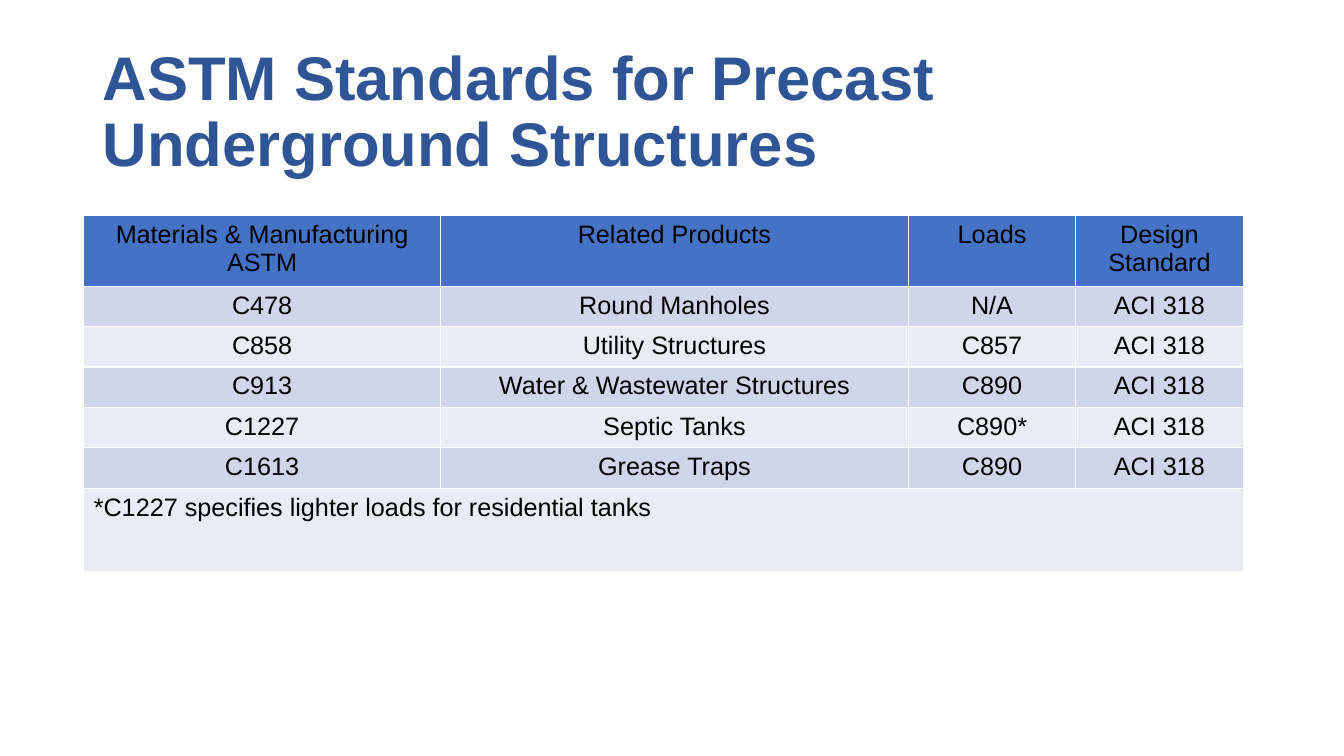
from pptx import Presentation
from pptx.dml.color import RGBColor
from pptx.enum.text import MSO_ANCHOR, PP_ALIGN
from pptx.util import Inches, Pt

LEFT, CENTER = PP_ALIGN.LEFT, PP_ALIGN.CENTER
MIDDLE = MSO_ANCHOR.MIDDLE
NAVY = RGBColor(0x2F, 0x55, 0x97)
BLACK = RGBColor(0, 0, 0)
HEADER_BLUE = RGBColor(0x44, 0x72, 0xC4)
BANDS = (RGBColor(0xE9, 0xEB, 0xF5), RGBColor(0xCF, 0xD5, 0xEA))

TITLE_FONT = {"name": "Arial", "size": Pt(44), "bold": True}
CELL_FONT = {"name": "Arial", "size": Pt(18), "bold": False}

TITLE = "ASTM Standards for Precast Underground Structures"
HEADER = ("Materials & Manufacturing ASTM", "Related Products", "Loads", "Design Standard")
STANDARDS = (
    ("C478", "Round Manholes", "N/A"),
    ("C858", "Utility Structures", "C857"),
    ("C913", "Water & Wastewater Structures", "C890"),
    ("C1227", "Septic Tanks", "C890*"),
    ("C1613", "Grease Traps", "C890"),
)
DESIGN_STANDARD = "ACI 318"
FOOTNOTE = "*C1227 specifies lighter loads for residential tanks"
COL_SHARES = (3.54, 4.64, 1.66, 1.66)
HEADER_H, ROW_H, FOOTNOTE_H = 0.67, 0.38, 0.83


def write(p, text, font, color, align):
    """Put one formatted run of text into a paragraph."""
    p.alignment = align
    r = p.add_run()
    r.text = text
    for name, value in font.items():
        setattr(r.font, name, value)
    r.font.color.rgb = color


def add_title(s, x, y, w, h):
    """Place the slide title, vertically centred in its box."""
    tf = s.shapes.add_textbox(Inches(x), Inches(y), Inches(w), Inches(h)).text_frame
    tf.word_wrap = True
    tf.vertical_anchor = MIDDLE
    p = tf.paragraphs[0]
    p.line_spacing = 0.9
    write(p, TITLE, TITLE_FONT, NAVY, LEFT)


def fill_cell(cell, text, fill, align=CENTER):
    """Colour a table cell and write its text."""
    cell.fill.solid()
    cell.fill.fore_color.rgb = fill
    write(cell.text_frame.paragraphs[0], text, CELL_FONT, BLACK, align)


def add_standards_table(s, x, y, w):
    """Place the table of standards with a merged footnote row."""
    rows = [HEADER] + [row + (DESIGN_STANDARD,) for row in STANDARDS]
    heights = [HEADER_H] + [ROW_H] * len(STANDARDS) + [FOOTNOTE_H]
    table = s.shapes.add_table(
        len(heights), len(HEADER), Inches(x), Inches(y), Inches(w), Inches(sum(heights))
    ).table
    for col, share in zip(table.columns, COL_SHARES):
        col.width = Inches(w * share / sum(COL_SHARES))
    for row, height in zip(table.rows, heights):
        row.height = Inches(height)
    for i, row in enumerate(rows):
        fill = BANDS[i % 2] if i else HEADER_BLUE
        for j, text in enumerate(row):
            fill_cell(table.cell(i, j), text, fill)
    last = len(rows)
    note = table.cell(last, 0)
    note.merge(table.cell(last, len(HEADER) - 1))
    fill_cell(note, FOOTNOTE, BANDS[last % 2], LEFT)


def main():
    """Build the slide and save it."""
    prs = Presentation()
    prs.slide_width, prs.slide_height = Inches(13.33), Inches(7.5)
    s = prs.slides.add_slide(prs.slide_layouts[6])
    add_title(s, 0.92, 0.4, 11.5, 1.45)
    add_standards_table(s, 0.83, 2.14, 11.5)
    prs.save("out.pptx")


if __name__ == "__main__":
    main()
